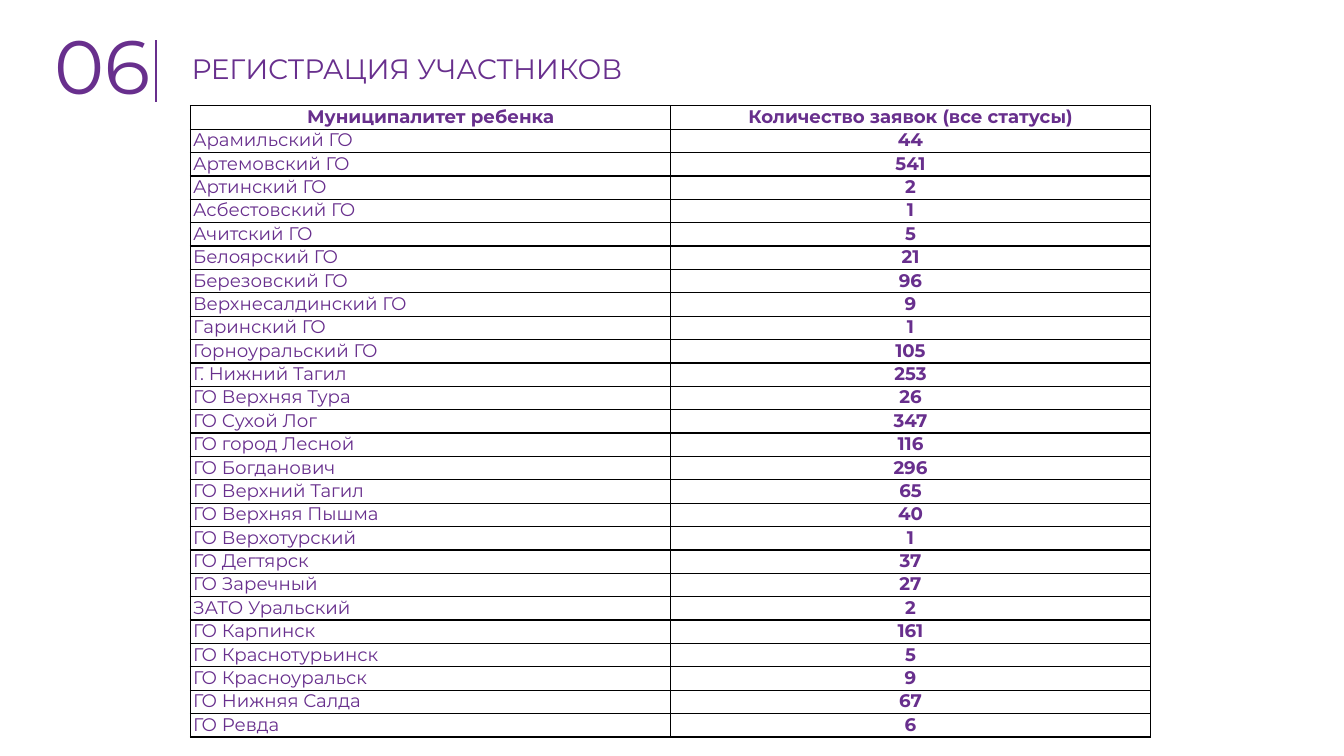
from lxml import etree
from pptx import Presentation
from pptx.dml.color import RGBColor
from pptx.enum.text import MSO_AUTO_SIZE, PP_ALIGN
from pptx.oxml.ns import qn
from pptx.util import Inches, Pt

CENTER, JUSTIFY = PP_ALIGN.CENTER, PP_ALIGN.JUSTIFY
FIT_SHAPE = MSO_AUTO_SIZE.SHAPE_TO_FIT_TEXT
FONT, PURPLE, BLACK = "Montserrat", "682F8D", "000000"
HEADINGS = ("Муниципалитет ребенка", "Количество заявок (все статусы)")
APPLICATIONS = (
    ("Арамильский ГО", 44),
    ("Артемовский ГО", 541),
    ("Артинский ГО", 2),
    ("Асбестовский ГО", 1),
    ("Ачитский ГО", 5),
    ("Белоярский ГО", 21),
    ("Березовский ГО", 96),
    ("Верхнесалдинский ГО", 9),
    ("Гаринский ГО", 1),
    ("Горноуральский ГО", 105),
    ("Г. Нижний Тагил", 253),
    ("ГО Верхняя Тура", 26),
    ("ГО Сухой Лог", 347),
    ("ГО город Лесной", 116),
    ("ГО Богданович", 296),
    ("ГО Верхний Тагил", 65),
    ("ГО Верхняя Пышма", 40),
    ("ГО Верхотурский", 1),
    ("ГО Дегтярск", 37),
    ("ГО Заречный", 27),
    ("ЗАТО Уральский", 2),
    ("ГО Карпинск", 161),
    ("ГО Краснотурьинск", 5),
    ("ГО Красноуральск", 9),
    ("ГО Нижняя Салда", 67),
    ("ГО Ревда", 6),
)


def color(value):
    """Turn a hex string into a colour."""
    return RGBColor.from_string(value)


def format_runs(paragraph, size, bold=False, spacing=0):
    """Give the runs of a paragraph the slide's lettering."""
    for run in paragraph.runs:
        run.font.name = FONT
        run.font.size = Pt(size)
        run.font.bold = bold
        run.font.color.rgb = color(PURPLE)
        if spacing:
            run.font._element.set("spc", str(spacing))


def add_label(slide, text, box, size, line_spacing=1.0, spacing=0):
    """Add a line of text in a box without side margins."""
    shape = slide.shapes.add_textbox(*box)
    frame = shape.text_frame
    frame.word_wrap = True
    frame.auto_size = FIT_SHAPE
    frame.margin_right = frame.margin_bottom = 0
    frame.margin_left = frame.margin_top = Inches(0.01)
    frame.text = text
    paragraph = frame.paragraphs[0]
    paragraph.line_spacing = line_spacing
    format_runs(paragraph, size, spacing=spacing)


def add_divider(slide, left, top, width, height):
    """Draw an upright line along the left side of a box."""
    builder = slide.shapes.build_freeform(left, top)
    builder.add_line_segments([(left, top + height)], close=False)
    divider = builder.convert_to_shape()
    divider.width = width
    divider.shadow.inherit = False
    divider.fill.background()
    divider.line.color.rgb = color(PURPLE)
    divider.line.width = Pt(1.42)


def add_header(slide, left, top, width, height):
    """Place the section number, the divider and the title in a band."""
    number_width, title_left = Inches(1.03), Inches(1.36)
    add_divider(slide, left + Inches(1.02), top + Inches(0.22), Inches(0.15), Inches(0.61))
    add_label(slide, "06", (left, top, number_width, height), 54)
    title_box = (left + title_left, top + Inches(0.27), width - title_left, Inches(0.37))
    add_label(slide, "РЕГИСТРАЦИЯ УЧАСТНИКОВ", title_box, 20, 1.15, -10)


def add_borders(cell):
    """Draw a thin black line on every side of a cell."""
    properties = cell._tc.get_or_add_tcPr()
    for side in ("a:lnL", "a:lnR", "a:lnT", "a:lnB"):
        line = etree.SubElement(properties, qn(side), w=str(Pt(1)))
        fill = etree.SubElement(line, qn("a:solidFill"))
        etree.SubElement(fill, qn("a:srgbClr"), val=BLACK)


def fill_cell(cell, text, bold, alignment):
    """Write one table cell and set its look."""
    cell.margin_left = cell.margin_right = Pt(1.8)
    cell.margin_top = cell.margin_bottom = 0
    cell.text = text
    paragraph = cell.text_frame.paragraphs[0]
    paragraph.alignment = alignment
    format_runs(paragraph, 13, bold)
    add_borders(cell)
    cell.fill.background()


def add_applications_table(slide, left, top, width, height):
    """Place the table of applications by municipality in a box."""
    rows = (HEADINGS,) + APPLICATIONS
    frame = slide.shapes.add_table(len(rows), len(HEADINGS), left, top, width, height)
    table = frame.table
    table.first_row = table.horz_banding = False
    for row_index, values in enumerate(rows):
        table.rows[row_index].height = height // len(rows)
        for column_index, value in enumerate(values):
            is_name = row_index > 0 and column_index == 0
            fill_cell(table.cell(row_index, column_index), str(value),
                      not is_name, JUSTIFY if is_name else CENTER)


def main():
    """Build and save the presentation."""
    presentation = Presentation()
    presentation.slide_width = Inches(13.33)
    presentation.slide_height = Inches(7.5)
    slide = presentation.slides.add_slide(presentation.slide_layouts[6])
    add_header(slide, Inches(0.53), Inches(0.18), Inches(5.99), Inches(0.92))
    add_applications_table(slide, Inches(1.89), Inches(1.05), Inches(9.52), Inches(6.27))
    presentation.save("out.pptx")


if __name__ == "__main__":
    main()
